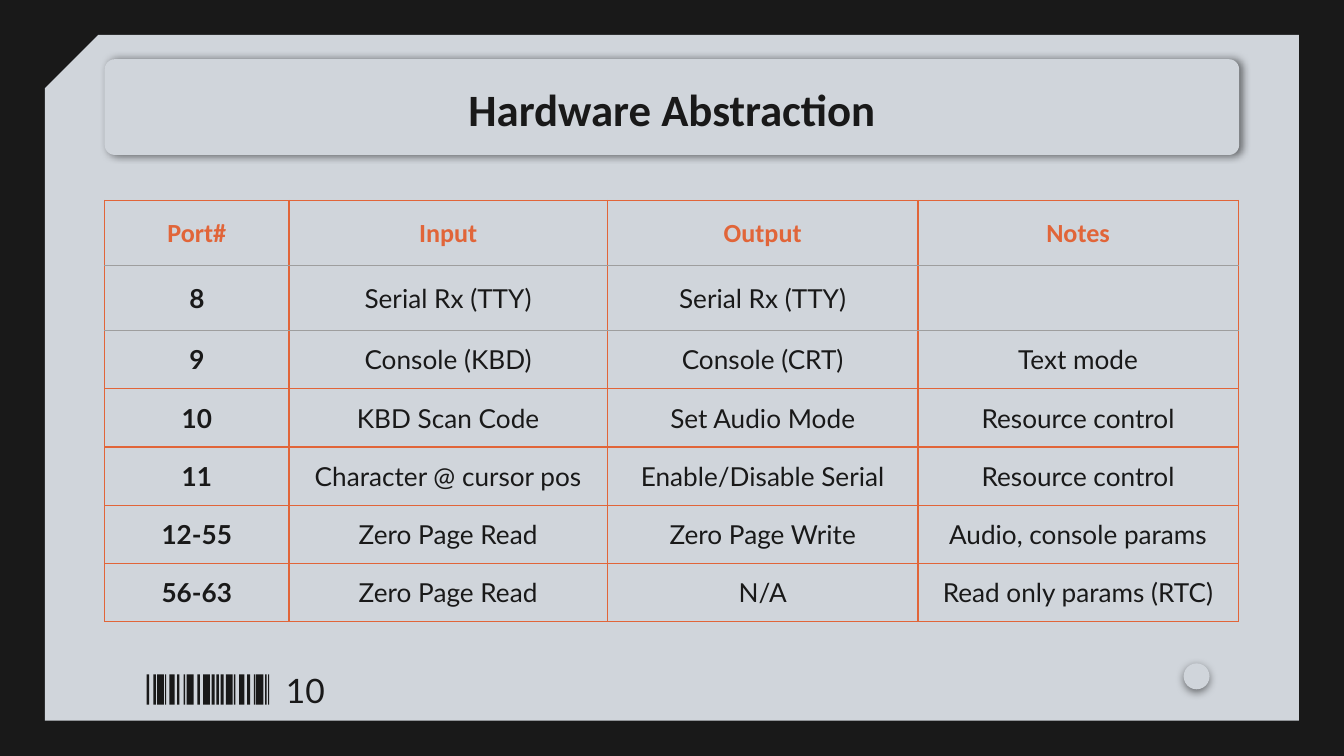
from dataclasses import dataclass

from lxml.etree import SubElement
from pptx import Presentation
from pptx.dml.color import RGBColor
from pptx.enum.shapes import MSO_SHAPE as Preset
from pptx.enum.text import MSO_ANCHOR as Anchor, PP_ALIGN as Align
from pptx.oxml import parse_xml
from pptx.oxml.ns import nsdecls, qn
from pptx.util import Cm, Pt


@dataclass(frozen=True)
class Theme:
    """Colours, fonts and type sizes of the slide."""
    ink: str = "191919"
    panel: str = "D0D5DB"
    accent: str = "E16539"
    rule: str = "9E9E9E"
    shadow: str = "000000"
    heading_font: str = "Calibri"
    body_font: str = "Lato"
    title_size: int = 24
    number_size: int = 18
    table_size: int = 14


THEME = Theme()
INSETS = dict.fromkeys(
    ("margin_left", "margin_right", "margin_top", "margin_bottom"), Cm(0.25))
TITLE = {"name": THEME.heading_font, "size": Pt(THEME.title_size), "bold": True}
HEADER = {"name": THEME.heading_font, "size": Pt(THEME.table_size), "bold": True}
BODY = {"name": THEME.body_font, "size": Pt(THEME.table_size), "bold": False}
PORT = {**BODY, "bold": True}
NUMBER = {**BODY, "size": Pt(THEME.number_size)}

COLUMN_WIDTHS = (3.48, 6.02, 5.87, 6.05)
ROW_HEIGHTS = (1.23, 1.23, 1.1, 1.1, 1.1, 1.1, 1.1)
PORT_ROWS = (
    ("Port#", "Input", "Output", "Notes"),
    ("8", "Serial Rx (TTY)", "Serial Rx (TTY)", ""),
    ("9", "Console (KBD)", "Console (CRT)", "Text mode"),
    ("10", "KBD Scan Code", "Set Audio Mode", "Resource control"),
    ("11", "Character @ cursor pos", "Enable/Disable Serial", "Resource control"),
    ("12-55", "Zero Page Read", "Zero Page Write", "Audio, console params"),
    ("56-63", "Zero Page Read", "N/A", "Read only params (RTC)"),
)
BARCODE_BARS = (
    (2.77, 0.05), (2.9, 0.05), (2.97, 0.13), (3.12, 0.02), (3.2, 0.1),
    (3.35, 0.04), (3.47, 0.03), (3.53, 0.13), (3.73, 0.05), (3.84, 0.13),
    (4, 0.06), (4.09, 0.05), (4.17, 0.06), (4.27, 0.13), (4.42, 0.03),
    (4.52, 0.1), (4.67, 0.06), (4.8, 0.02), (4.83, 0.15), (5.01, 0.03),
    (5.07, 0.02),
)


def set_values(target, values):
    """Set each named attribute of the target."""
    for name, value in values.items():
        setattr(target, name, value)


def add_panel(shapes, preset, box, color=THEME.panel, corner=None, flipped=False):
    """Add a filled shape without outline or shadow."""
    shape = shapes.add_shape(preset, *map(Cm, box))
    shape.shadow.inherit = False
    shape.fill.solid()
    shape.fill.fore_color.rgb = RGBColor.from_string(color)
    shape.line.fill.background()
    if corner is not None:
        shape.adjustments[0] = corner
    if flipped:
        shape._element.spPr.get_or_add_xfrm().set("flipH", "1")
    return shape


def add_shadow(shape, degrees):
    """Cast a soft outer shadow in the given direction."""
    effects = shape._element.spPr.find(qn("a:effectLst"))
    shadow = SubElement(
        effects, qn("a:outerShdw"), blurRad=str(Pt(4.5)), dist=str(Pt(1.5)),
        dir=str(degrees * 60000), algn="bl", rotWithShape="0")
    color = SubElement(shadow, qn("a:srgbClr"), val=THEME.shadow)
    SubElement(color, qn("a:alpha"), val="50000")


def write_text(frame, text, style, color=THEME.ink):
    """Write one centred paragraph in the given style."""
    paragraph = frame.paragraphs[0]
    paragraph.alignment = Align.CENTER
    if text:
        paragraph.text = text
    set_values(paragraph.font, style)
    paragraph.font.color.rgb = RGBColor.from_string(color)


def add_label(shapes, box, text, style):
    """Add a text box centred both ways."""
    frame = shapes.add_textbox(*map(Cm, box)).text_frame
    set_values(frame, {**INSETS, "word_wrap": True, "vertical_anchor": Anchor.MIDDLE})
    write_text(frame, text, style)


def set_borders(cell, colors):
    """Draw the left, right, top and bottom borders of a cell."""
    properties = cell._tc.get_or_add_tcPr()
    for index, (side, color) in enumerate(zip("LRTB", colors)):
        properties.insert(index, parse_xml(
            f'<a:ln{side} {nsdecls("a")} w="{Pt(0.75)}"><a:solidFill>'
            f'<a:srgbClr val="{color}"/></a:solidFill></a:ln{side}>'))


def add_port_table(shapes, left, top):
    """Add the table of ports with its ruled grid."""
    table = shapes.add_table(
        len(PORT_ROWS), len(COLUMN_WIDTHS), Cm(left), Cm(top),
        Cm(sum(COLUMN_WIDTHS)), Cm(sum(ROW_HEIGHTS))).table
    set_values(table, {"first_row": False, "horz_banding": False})
    for column, width in zip(table.columns, COLUMN_WIDTHS):
        column.width = Cm(width)
    for row, height in zip(table.rows, ROW_HEIGHTS):
        row.height = Cm(height)
    rules = [THEME.accent, THEME.rule, THEME.rule] + [THEME.accent] * 5
    for row_index, texts in enumerate(PORT_ROWS):
        for column_index, text in enumerate(texts):
            cell = table.cell(row_index, column_index)
            set_values(cell, {**INSETS, "vertical_anchor": Anchor.MIDDLE})
            cell.fill.background()
            set_borders(cell, (THEME.accent, THEME.accent,
                               rules[row_index], rules[row_index + 1]))
            if row_index == 0:
                write_text(cell.text_frame, text, HEADER, THEME.accent)
            else:
                write_text(cell.text_frame, text, BODY if column_index else PORT)


def add_barcode(shapes, top, height):
    """Add the group of barcode bars."""
    group = shapes.add_group_shape()
    for left, width in BARCODE_BARS:
        add_panel(group.shapes, Preset.RECTANGLE, (left, top, width, height), THEME.ink)


def main():
    """Build and save the slide."""
    presentation = Presentation()
    set_values(presentation, {"slide_width": Cm(25.4), "slide_height": Cm(14.29)})
    slide = presentation.slides.add_slide(presentation.slide_layouts[6])
    slide.background.fill.solid()
    slide.background.fill.fore_color.rgb = RGBColor.from_string(THEME.ink)
    shapes = slide.shapes

    add_panel(shapes, Preset.SNIP_1_RECTANGLE, (0.85, 0.66, 23.7, 12.96),
              corner=0.078, flipped=True)
    title_panel = add_panel(shapes, Preset.ROUNDED_RECTANGLE,
                            (1.98, 1.12, 21.44, 1.81), corner=0.106)
    add_shadow(title_panel, 6)
    button = add_panel(shapes, Preset.OVAL, (22.37, 12.54, 0.49, 0.49))
    add_shadow(button, 90)
    add_barcode(shapes, 12.75, 0.57)
    add_label(shapes, (2, 1.25, 21.4, 1.6), "Hardware Abstraction", TITLE)
    add_port_table(shapes, 1.98, 3.79)
    add_label(shapes, (4.98, 12.63, 1.58, 0.82), "10", NUMBER)
    presentation.save("out.pptx")


if __name__ == "__main__":
    main()
